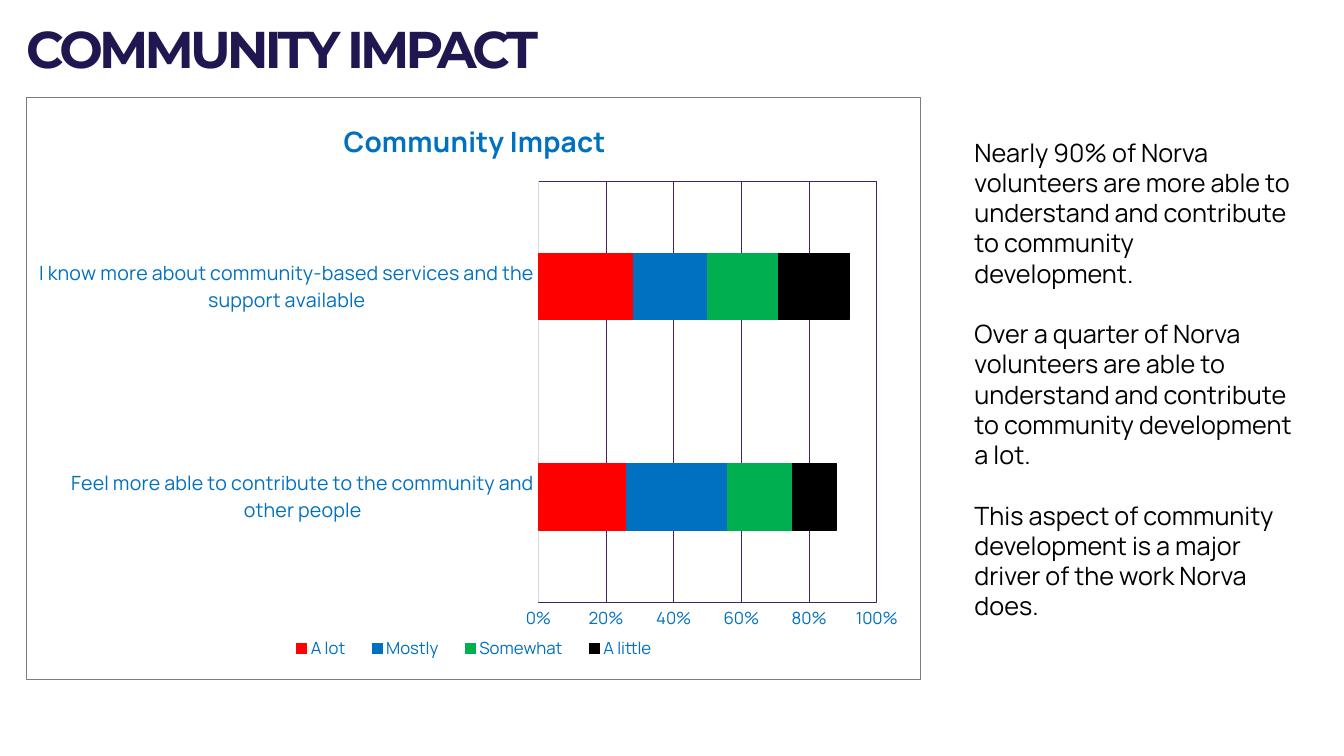
from lxml import etree
from pptx import Presentation
from pptx.chart.data import CategoryChartData
from pptx.dml.color import RGBColor
from pptx.enum.chart import XL_CHART_TYPE, XL_LEGEND_POSITION, XL_TICK_MARK
from pptx.enum.text import MSO_ANCHOR, PP_ALIGN
from pptx.oxml import parse_xml
from pptx.oxml.ns import nsdecls, qn
from pptx.util import Pt

BAR_STACKED = XL_CHART_TYPE.BAR_STACKED
BOTTOM = XL_LEGEND_POSITION.BOTTOM
NO_TICK = XL_TICK_MARK.NONE
TOP = MSO_ANCHOR.TOP
LEFT = PP_ALIGN.LEFT

BLUE = "0070C0"
CATEGORIES = [
    "Feel more able to contribute to the community and other people",
    "I know more about community-based services and the support available",
]
SERIES = [
    ("A lot", "FF0000", (0.26, 0.28)),
    ("Mostly", BLUE, (0.30, 0.22)),
    ("Somewhat", "00B050", (0.19, 0.21)),
    ("A little", "000000", (0.13, 0.21)),
]
FINDINGS = [
    "Nearly 90% of Norva volunteers are more able to understand and contribute to community development.",
    "Over a quarter of Norva volunteers are able to understand and contribute to community development a lot.",
    "This aspect of community development is a major driver of the work Norva does.",
]


def rgb(value):
    return RGBColor.from_string(value)


def set_all(target, values):
    for name, value in values.items():
        setattr(target, name, value)


def set_font(font, name, size, color, bold=False):
    set_all(font, {"name": name, "size": Pt(size), "bold": bold})
    font.color.rgb = rgb(color)


def set_line(line, color):
    line.color.rgb = rgb(color)
    line.width = Pt(0.75)


def outline(color):
    return parse_xml(
        f'<c:spPr {nsdecls("c", "a")}><a:noFill/><a:ln w="9525"><a:solidFill>'
        f'<a:srgbClr val="{color}"/></a:solidFill></a:ln></c:spPr>'
    )


def set_layout(parent, index, size, inner=False, **lengths):
    for old in parent.findall(qn("c:layout")):
        parent.remove(old)
    layout = parse_xml(f'<c:layout {nsdecls("c")}><c:manualLayout/></c:layout>')
    values = {"layoutTarget": "inner"} if inner else {}
    values.update(xMode="edge", yMode="edge")
    for tag, length in lengths.items():
        values[tag] = Pt(length) / Pt(size[tag in "yh"])
    for tag, value in values.items():
        etree.SubElement(layout[0], qn(f"c:{tag}")).set("val", str(value))
    parent.insert(index, layout)


def add_title(slide, left, top, width, height):
    sp = slide.shapes.title
    set_all(sp, {"left": Pt(left), "top": Pt(top), "width": Pt(width), "height": Pt(height)})
    tf = sp.text_frame
    set_all(tf, {
        "margin_left": 0, "margin_top": 0, "margin_right": 0, "margin_bottom": 0,
        "vertical_anchor": TOP, "word_wrap": True,
    })
    p = tf.paragraphs[0]
    set_all(p, {"alignment": LEFT, "line_spacing": Pt(32.3), "space_before": Pt(0)})
    r = p.add_run()
    r.text = "COMMUNITY IMPACT"
    set_font(r.font, "Montserrat", 36.9, "201751", True)
    r.font._element.set("spc", "-280")


def add_impact_chart(slide, left, top, width, height):
    data = CategoryChartData(number_format="0%")
    data.categories = CATEGORIES
    for name, _, values in SERIES:
        data.add_series(name, values)
    chart = slide.shapes.add_chart(
        BAR_STACKED, Pt(left), Pt(top), Pt(width), Pt(height), data
    ).chart
    set_font(chart.font, "Manrope", 12, BLUE)

    chart.has_title = True
    p = chart.chart_title.text_frame.paragraphs[0]
    r = p.add_run()
    r.text = "Community Impact"
    set_font(r.font, "Manrope", 20, BLUE, True)

    plot = chart.plots[0]
    set_all(plot, {"gap_width": 219, "overlap": 100, "vary_by_categories": False})
    for series, (_, color, _) in zip(plot.series, SERIES):
        series.format.fill.solid()
        series.format.fill.fore_color.rgb = rgb(color)
        set_line(series.format.line, color)

    ticks = {"major_tick_mark": NO_TICK, "minor_tick_mark": NO_TICK}
    cat = chart.category_axis
    set_all(cat, ticks)
    set_font(cat.tick_labels.font, "Manrope", 14, BLUE)
    set_line(cat.format.line, "D9D9D9")

    val = chart.value_axis
    set_all(val, {
        **ticks, "minimum_scale": 0, "maximum_scale": 1,
        "major_unit": 0.2, "has_major_gridlines": True,
    })
    set_all(val.tick_labels, {"number_format": "0%", "number_format_is_linked": False})
    set_font(val.tick_labels.font, "Manrope", 12, BLUE)
    set_line(val.major_gridlines.format.line, "472364")
    val.format.line.fill.background()

    chart.has_legend = True
    set_all(chart.legend, {"position": BOTTOM, "include_in_layout": False})
    set_font(chart.legend.font, "Manrope", 12, BLUE)

    root = chart._chartSpace.find(qn("c:chart"))
    root.addnext(outline("7C7C7C"))
    area = root.find(qn("c:plotArea"))
    area.append(outline("472364"))
    size = (width, height)
    set_layout(area, 0, size, inner=True, x=366, y=60, w=242, h=301.5)
    set_layout(root.find(qn("c:title")), 1, size, x=223, y=12)
    set_layout(root.find(qn("c:legend")), 1, size, x=178, y=382, w=284, h=25)


def add_findings(slide, left, top, width, height):
    tf = slide.shapes.add_textbox(Pt(left), Pt(top), Pt(width), Pt(height)).text_frame
    tf.word_wrap = True
    for i, text in enumerate(FINDINGS):
        p = tf.paragraphs[0] if i == 0 else tf.add_paragraph()
        set_all(p, {"line_spacing": Pt(21.6), "space_before": Pt(21.6 if i else 0)})
        r = p.add_run()
        r.text = text
        set_font(r.font, "Manrope", 18, "000000")


def main():
    prs = Presentation()
    set_all(prs, {"slide_width": Pt(960), "slide_height": Pt(540)})
    slide = prs.slides.add_slide(prs.slide_layouts.get_by_name("Title Only"))
    add_title(slide, 18.7, 23.8, 656.6, 71.3)
    add_impact_chart(slide, 18.7, 69.1, 639.4, 416.9)
    add_findings(slide, 689, 94.3, 243.4, 356.4)
    prs.save("out.pptx")


if __name__ == "__main__":
    main()
